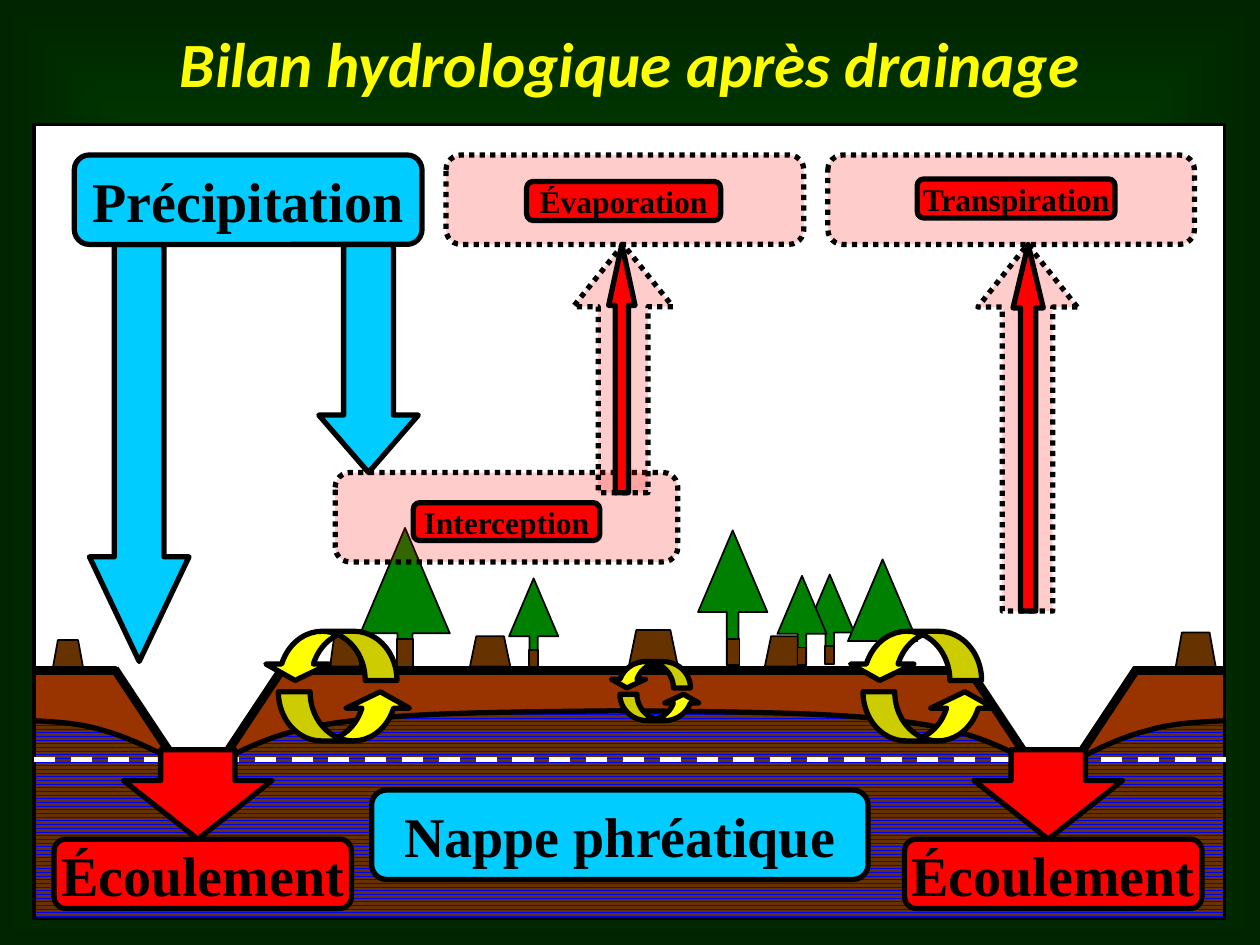
from lxml import etree
from pptx import Presentation, util as u
from pptx.dml.color import RGBColor
from pptx.enum import dml, shapes, text
from pptx.oxml.ns import qn

PX = 9144  # one px is a hundredth of an inch
BLACK = RGBColor(0, 0, 0)
WHITE = RGBColor(255, 255, 255)
YELLOW = RGBColor(255, 255, 0)
RED = RGBColor(255, 0, 0)
SKY = RGBColor(0, 204, 255)
BLUE = RGBColor(0, 0, 255)
GREEN = RGBColor(0, 128, 0)
SOIL = RGBColor(153, 51, 0)
WOOD = RGBColor(102, 51, 0)
CENTRE_GREEN = RGBColor(0, 102, 0)
EDGE_GREEN = RGBColor(0, 37, 0)

KIND = shapes.MSO_SHAPE
RECT, ROUND, DOWN = KIND.RECTANGLE, KIND.ROUNDED_RECTANGLE, KIND.DOWN_ARROW

presentation = Presentation()
presentation.slide_width, presentation.slide_height = 1000 * PX, 750 * PX
slide = presentation.slides.add_slide(presentation.slide_layouts[6])


def add_form(kind, geometry, fill=None, width=0, adjust=(), rotation=0, faded=False):
    """Add a preset in a box, or an outline through points (closed if filled) when kind is None."""
    if kind is None:
        points = [(x * PX, y * PX) for x, y in geometry]
        builder = slide.shapes.build_freeform(*points[0])
        builder.add_line_segments(points[1:], close=fill is not None)
        shape = builder.convert_to_shape()
    else:
        shape = slide.shapes.add_shape(kind, *[value * PX for value in geometry])
        for index, value in enumerate(adjust):
            shape.adjustments[index] = value
    shape.shadow.inherit = False
    shape.rotation = rotation
    if fill is None:
        shape.fill.background()
    else:
        shape.fill.solid()
        shape.fill.fore_color.rgb = fill
    if width:
        shape.line.color.rgb = BLACK
        shape.line.width = u.Pt(width)
    else:
        shape.line.fill.background()
    if faded:
        colour = shape._element.spPr.find(qn("a:solidFill"))[0]
        etree.SubElement(colour, qn("a:alpha"), val="20000")
        shape.line.dash_style = dml.MSO_LINE.ROUND_DOT
    return shape


def add_line(x1, y1, x2, y2, colour=BLACK, width=5):
    line = slide.shapes.add_connector(
        shapes.MSO_CONNECTOR.STRAIGHT, x1 * PX, y1 * PX, x2 * PX, y2 * PX)
    line.line.color.rgb = colour
    line.line.width = u.Pt(width)
    etree.SubElement(line._element.spPr, qn("a:effectLst"))
    return line


# Background: green glow, darker towards the edges
background = slide.background.fill
background.gradient()
for stop, colour in zip(background.gradient_stops, (CENTRE_GREEN, EDGE_GREEN)):
    stop.color.rgb = colour
gradient = slide._element.cSld.find(".//" + qn("a:gradFill"))
gradient.remove(gradient.find(qn("a:lin")))
focus = etree.SubElement(gradient, qn("a:path"), path="shape")
etree.SubElement(focus, qn("a:fillToRect"), l="50000", t="50000", r="50000", b="50000")

# Sky and soil
FRAME = (27, 99, 945, 630)
add_form(RECT, FRAME, WHITE)
add_form(RECT, (27, 532, 945, 197), SOIL)

# Trees (left, top, width, height) and stumps (left, top, width, height, slope)
vegetation = [
    (404, 459, 39, 71), (639, 456, 39, 71),
    (607, 505, 32, 24, 5), (499, 500, 39, 29, 6), (262, 500, 24, 29, 4),
    (373, 505, 32, 24, 5), (42, 508, 24, 22, 4),
    (617, 457, 39, 71), (554, 421, 55, 107), (673, 444, 55, 87), (286, 419, 71, 110),
    (933, 502, 32, 28, 5),
]
for left, top, width, height, *slope in vegetation:
    right, bottom = left + width, top + height
    if slope:
        add_form(None, [(right, bottom), (right - slope[0], top),
                        (left + slope[0], top), (left, bottom)], WOOD, 1)
    else:
        add_form(KIND.UP_ARROW, (left, top, width, height), GREEN, 1, (0.169, 1.179))
        trunk_width, trunk_height = round(width * 0.18), round(height * 0.2)
        add_form(RECT, (left + round(width * 0.41), bottom - trunk_height,
                        trunk_width, trunk_height), WOOD, 1)

# Ground line and water-logged layer
add_line(27, 532, 972, 532)
water = add_form(RECT, (27, 564, 945, 165), BLUE, 1)
water.fill.patterned()
water.fill.pattern = dml.MSO_PATTERN.ZIG_ZAG
water.fill.fore_color.rgb = BLUE
water.fill.back_color.rgb = WOOD

# Water table: two Bézier pieces per curve, then the top corners of the dry soil above
middle = [(500, 564), (417, 565), (333, 565), (280, 572), (226, 578), (201, 591), (177, 603)]
middle_top = [(204, 557), (500, 557)]
tables = [
    ([(27, 572), (46, 573), (64, 574), (83, 580), (101, 585), (119, 594), (138, 603)],
     [(112, 561), (27, 561)]),
    (middle, middle_top),
    ([(992 - x, y) for x, y in middle], [(992 - x, y) for x, y in middle_top]),
    ([(973, 572), (951, 573), (929, 574), (910, 580), (890, 585), (872, 594), (854, 603)],
     [(880, 561), (973, 561)]),
]
STEPS = 12
curves = []
for controls, top_corners in tables:
    curve = [controls[0]]
    for piece in (controls[:4], controls[3:]):
        for step in range(1, STEPS + 1):
            t = step / STEPS
            weights = ((1 - t) ** 3, 3 * t * (1 - t) ** 2, 3 * t * t * (1 - t), t ** 3)
            curve.append(tuple(sum(weight * point[axis] for weight, point in zip(weights, piece))
                               for axis in (0, 1)))
    add_form(None, curve + top_corners, SOIL)
    curves.append(curve)

# Ditches
for left in (90, 768):
    add_form(None, [(left, 525), (left + 53, 603), (left + 82, 603), (left + 134, 525)], WHITE)
    for x1, y1, x2, y2 in ((1, 531, 48, 602), (47, 600, 88, 600), (134, 531, 87, 602)):
        add_line(left + x1, y1, left + x2, y2)
for curve in curves:
    add_form(None, curve, width=3)
add_form(RECT, FRAME, width=2)

# Title
title = slide.shapes.add_textbox(0, 0, 1000 * PX, 99 * PX)
labels = [(title, "Bilan hydrologique après drainage",
           {"size": u.Pt(36), "name": "Calibri", "bold": True, "italic": True}, YELLOW)]

# Flows: kind, box, fill, adjustments, rotation, faded, label, label size
CORNER = (0.167,)
flows = [
    (DOWN, (71, 194, 79, 331), SKY, (0.5, 1.051), 0, False, "", 0),
    (ROUND, (59, 123, 276, 71), SKY, CORNER, 0, False, "Précipitation", 32),
    (DOWN, (253, 194, 79, 181), SKY, (0.5, 0.576), 0, False, "", 0),
    (ROUND, (266, 375, 272, 71), RED, CORNER, 0, True, "", 0),
    (ROUND, (328, 399, 148, 30), RED, CORNER, 0, False, "Interception", 18),
    (DOWN, (455, 194, 79, 197), RED, (0.5, 0.625), 180, True, "", 0),
    (ROUND, (354, 123, 284, 71), RED, CORNER, 0, True, "", 0),
    (ROUND, (418, 144, 154, 31), RED, CORNER, 0, False, "Évaporation", 18),
    (DOWN, (483, 194, 21, 197), RED, (0.5, 2.305), 180, False, "", 0),
    (ROUND, (657, 123, 291, 71), RED, CORNER, 0, True, "", 0),
    (DOWN, (776, 194, 79, 291), RED, (0.506, 0.629), 180, True, "", 0),
    (ROUND, (728, 142, 157, 31), RED, CORNER, 0, False, "Transpiration", 18),
    (DOWN, (804, 194, 24, 291), RED, (0.506, 2.096), 180, False, "", 0),
]
outflows = []
for left in (43, 718):
    outflows += [
        (ROUND, (left, 666, 236, 55), RED, CORNER, 0, False, "Écoulement", 32),
        (DOWN, (left + 55, 595, 118, 71), RED, (0.5, 0.656), 0, False, "", 0),
    ]
outflows.append((ROUND, (295, 627, 394, 71), SKY, CORNER, 0, False, "Nappe phréatique", 32))

for group in (flows, outflows):
    if group is outflows:
        # Drain level and exchange loops, between the flows and the outflows
        drain = add_line(27, 603, 973, 603, WHITE, 3)
        drain.line.dash_style = dml.MSO_LINE.DASH
        for left, top, width, height, shift, rise in (
                (685, 549, 106, 39, 12, 48), (221, 549, 106, 39, 12, 48),
                (492, 551, 64, 21, 8, 26)):
            for x, y, rotation in ((left, top, 0), (left - shift, top - rise, 180)):
                add_form(KIND.CURVED_UP_ARROW, (x, y, width, height), YELLOW, 3,
                         (0.645, 1.289, 0.333), rotation)
    for kind, box, fill, adjust, rotation, faded, label, size in group:
        shape = add_form(kind, box, fill, 3, adjust, rotation, faded)
        if label:
            labels.append((shape, label, {"size": u.Pt(size), "name": "Times New Roman",
                                          "bold": True}, BLACK))

# Wording
for shape, label, font_format, colour in labels:
    frame = shape.text_frame
    frame.word_wrap = shape is title
    frame.vertical_anchor = text.MSO_ANCHOR.MIDDLE
    paragraph = frame.paragraphs[0]
    paragraph.alignment = text.PP_ALIGN.CENTER
    run = paragraph.add_run()
    run.text = label
    run.font.color.rgb = colour
    for name, value in font_format.items():
        setattr(run.font, name, value)

presentation.save("out.pptx")
